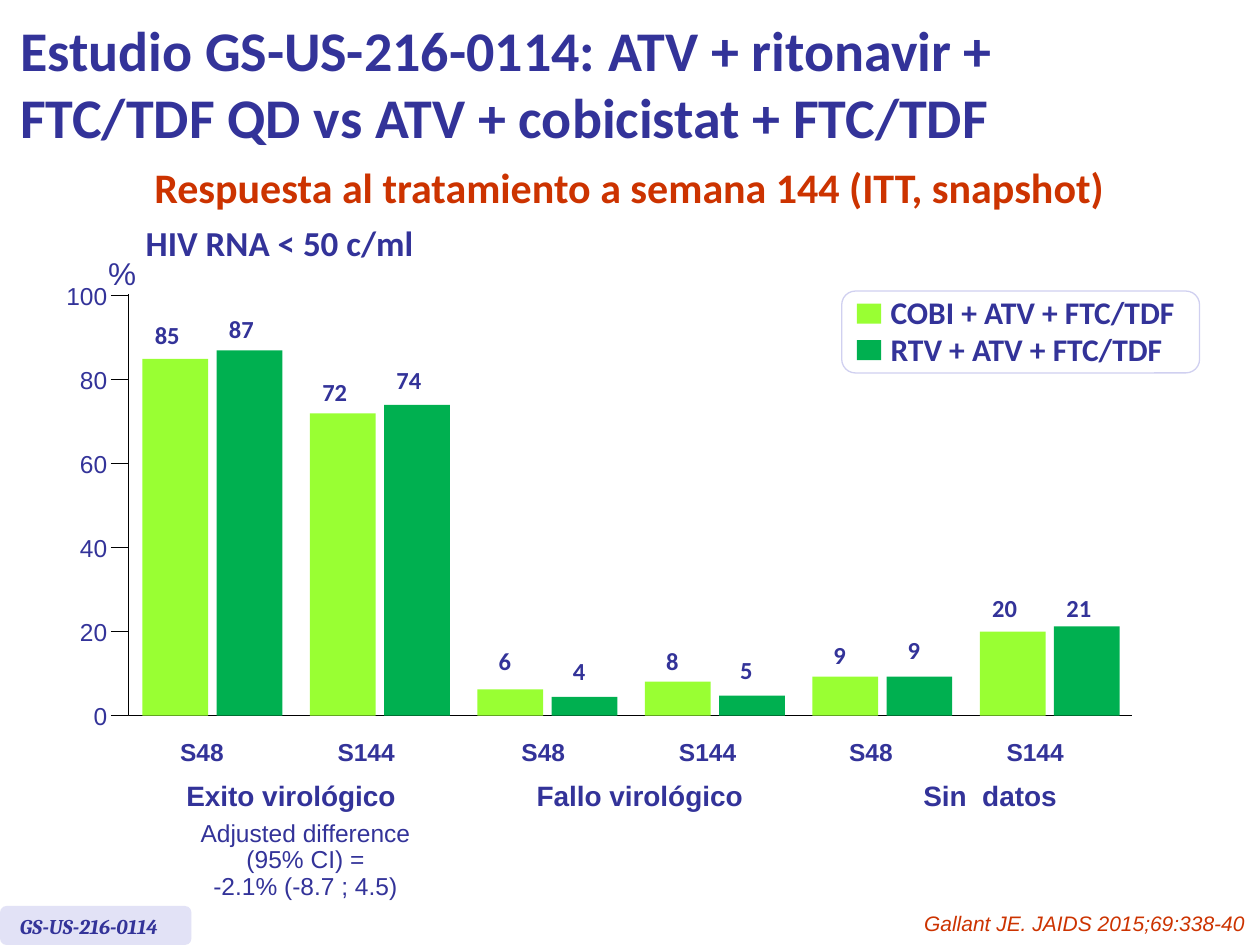
from dataclasses import dataclass

import pptx
import pptx.dml.color
import pptx.enum.shapes
import pptx.enum.text
import pptx.util
from lxml import etree

Pt = pptx.util.Pt
ALIGN = pptx.enum.text.PP_ALIGN
ANCHOR = pptx.enum.text.MSO_ANCHOR
AUTO = pptx.enum.text.MSO_AUTO_SIZE
SHAPE = pptx.enum.shapes.MSO_SHAPE

COLORS = {"blue": "333399", "red": "CC3300", "cobi": "99FF33", "rtv": "00B050",
          "tag": "E2E2F6", "legend": "D0D0F0", "white": "FFFFFF", "black": "000000"}

AXIS_X, AXIS_RIGHT = 73.4, 646.6
AXIS_TOP, AXIS_BOTTOM = 167.8, 409
PT_PER_PERCENT = 2.4
TICK_LENGTH = 10
FIRST_BAR, PAIR_PITCH, BAR_PITCH, BAR_WIDTH = 81.4, 95.7, 42.4, 37.6


@dataclass
class Style:
    size: float
    font: str = "Arial"
    color: str = "blue"
    bold: bool = False
    italic: bool = False
    align: ALIGN = ALIGN.LEFT
    spacing: float = 1.0


@dataclass
class Bar:
    label: str
    height: float  # drawn height, in percent
    label_top: float


@dataclass
class Outcome:
    name: str
    left: float
    width: float
    weeks_left: float


@dataclass
class Series:
    name: str
    color: str
    top: float


PAIRS = [
    (Bar("85", 85, 179.3), Bar("87", 87, 175.7)),
    (Bar("72", 72, 211.7), Bar("74", 74, 205.2)),
    (Bar("6", 6.3, 365.8), Bar("4", 4.5, 371.5)),
    (Bar("8", 8.1, 365.8), Bar("5", 4.8, 370.8)),
    (Bar("9", 9.3, 362.2), Bar("9", 9.3, 359.3)),
    (Bar("20", 20, 335.5), Bar("21", 21.3, 335.5)),
]
OUTCOMES = [Outcome("Exito virológico", 99.4, 136, 95.8),
            Outcome("Fallo virológico", 299.5, 134, 290.9),
            Outcome("Sin  datos", 520.6, 91.4, 478.1)]
SERIES = [Series("COBI + ATV + FTC/TDF", "cobi", 173.5),
          Series("RTV + ATV + FTC/TDF", "rtv", 194.4)]


def rgb(name: str) -> pptx.dml.color.RGBColor:
    return pptx.dml.color.RGBColor.from_string(COLORS[name])


def style_paragraph(p, style: Style) -> None:
    p.alignment = style.align
    p.line_spacing = style.spacing
    p.font.size = Pt(style.size)
    p.font.name = style.font
    p.font.bold = style.bold
    p.font.italic = style.italic
    p.font.color.rgb = rgb(style.color)


def add_text(s, text: str, left: float, top: float, width: float, height: float,
             style: Style, wrap: bool = False) -> None:
    """Add a text box with one paragraph per line of text."""
    tf = s.shapes.add_textbox(Pt(left), Pt(top), Pt(width), Pt(height)).text_frame
    tf.text = text
    tf.word_wrap = wrap
    tf.auto_size = AUTO.SHAPE_TO_FIT_TEXT
    for p in tf.paragraphs:
        style_paragraph(p, style)


def add_box(s, left: float, top: float, width: float, height: float, fill: str,
            kind: SHAPE = SHAPE.RECTANGLE, line: str = "") -> None:
    sp = s.shapes.add_shape(kind, Pt(left), Pt(top), Pt(width), Pt(height))
    sp.shadow.inherit = False
    sp.fill.solid()
    sp.fill.fore_color.rgb = rgb(fill)
    if line:
        sp.line.color.rgb = rgb(line)
        sp.line.width = Pt(0.75)
    else:
        sp.line.fill.background()


def add_tick(s, y: float) -> None:
    tick = s.shapes.add_connector(pptx.enum.shapes.MSO_CONNECTOR.STRAIGHT,
                                  Pt(AXIS_X - TICK_LENGTH), Pt(y), Pt(AXIS_X), Pt(y))
    tick.line.color.rgb = rgb("black")
    tick.line.width = Pt(0.75)
    etree.SubElement(tick._element.spPr, pptx.oxml.ns.qn("a:effectLst"))


def add_axes(s) -> None:
    builder = s.shapes.build_freeform(Pt(AXIS_RIGHT), Pt(AXIS_BOTTOM))
    builder.add_line_segments([(Pt(AXIS_X), Pt(AXIS_BOTTOM)), (Pt(AXIS_X), Pt(AXIS_TOP))],
                              close=False)
    axes = builder.convert_to_shape()
    axes.shadow.inherit = False
    axes.fill.background()
    axes.line.color.rgb = rgb("black")
    axes.line.width = Pt(0.75)
    for percent in range(0, 101, 20):
        y = AXIS_BOTTOM - percent * PT_PER_PERCENT
        add_tick(s, y)
        width = 14.4 + 7.9 * len(str(percent))
        add_text(s, str(percent), 68.4 - width, y - 12.2, width, 24.5,
                 Style(14, align=ALIGN.RIGHT))
    add_text(s, "%", 54.7, 141.8, 31, 28.8, Style(18), wrap=True)


def add_bars(s) -> None:
    value_style = Style(14, "Calibri", bold=True)
    for i, pair in enumerate(PAIRS):
        for j, (bar, series) in enumerate(zip(pair, SERIES)):
            left = FIRST_BAR + i * PAIR_PITCH + j * BAR_PITCH
            height = bar.height * PT_PER_PERCENT
            add_box(s, left, AXIS_BOTTOM - height, BAR_WIDTH, height, series.color)
            indent, width = (5, 22.3) if len(bar.label) == 1 else (0, 28.8)
            add_text(s, bar.label, left + indent, bar.label_top, width, 24.5, value_style)


def add_categories(s) -> None:
    for outcome in OUTCOMES:
        add_text(s, outcome.name, outcome.left, 441.4, outcome.width, 26.6,
                 Style(16, bold=True))
        for week, offset, width in (("S48", 0, 39.6), ("S144", 90, 47.5)):
            add_text(s, week, outcome.weeks_left + offset, 417.6, width, 24.5,
                     Style(14, bold=True))


def add_legend(s) -> None:
    add_box(s, 481, 166.3, 204.5, 46.8, "white", SHAPE.ROUNDED_RECTANGLE, "legend")
    for series in SERIES:
        add_box(s, 489.6, series.top, 13.9, 11.5, series.color)
        add_text(s, series.name, 501.8, series.top - 9.4, 183.6, 28.8,
                 Style(18, "Calibri", bold=True), wrap=True)


def add_title(s) -> None:
    title = s.shapes.title
    title.left, title.top, title.width, title.height = Pt(4.3), Pt(3.6), Pt(687.6), Pt(87.1)
    tf = title.text_frame
    tf.text = "Estudio GS-US-216-0114: ATV + ritonavir + FTC/TDF QD vs ATV + cobicistat + FTC/TDF"
    tf.word_wrap = True
    tf.auto_size = AUTO.NONE
    tf.vertical_anchor = ANCHOR.MIDDLE
    style_paragraph(tf.paragraphs[0], Style(32, "Calibri", bold=True))


def main() -> None:
    prs = pptx.Presentation()
    prs.slide_width, prs.slide_height = Pt(720), Pt(540)
    s = prs.slides.add_slide(prs.slide_layouts.get_by_name("Title Only"))
    add_title(s)
    add_text(s, "Gallant JE. JAIDS 2015;69:338-40", 512.6, 517, 206, 21.6,
             Style(12, color="red", italic=True, align=ALIGN.RIGHT))
    add_box(s, 0, 517.7, 109.4, 22.3, "tag", SHAPE.ROUNDED_RECTANGLE)
    add_text(s, "GS-US-216-0114", 4.3, 518.4, 101.5, 21.6,
             Style(12, "Cambria", bold=True, italic=True), wrap=True)
    add_text(s, "Respuesta al tratamiento a semana 144 (ITT, snapshot)", 80.6, 88.6, 558, 36,
             Style(24, "Calibri", "red", bold=True, align=ALIGN.CENTER))
    add_text(s, "HIV RNA < 50 c/ml", 59.8, 127.4, 200, 27.4,
             Style(20, "Calibri", bold=True, align=ALIGN.CENTER, spacing=0.8), wrap=True)
    add_axes(s)
    add_bars(s)
    add_categories(s)
    add_legend(s)
    add_text(s, "Adjusted difference\n(95% CI) =\n-2.1% (-8.7 ; 4.5)", 107.3, 465.8, 134.6, 53.3,
             Style(14, align=ALIGN.CENTER, spacing=0.9))
    prs.save("out.pptx")


if __name__ == "__main__":
    main()
